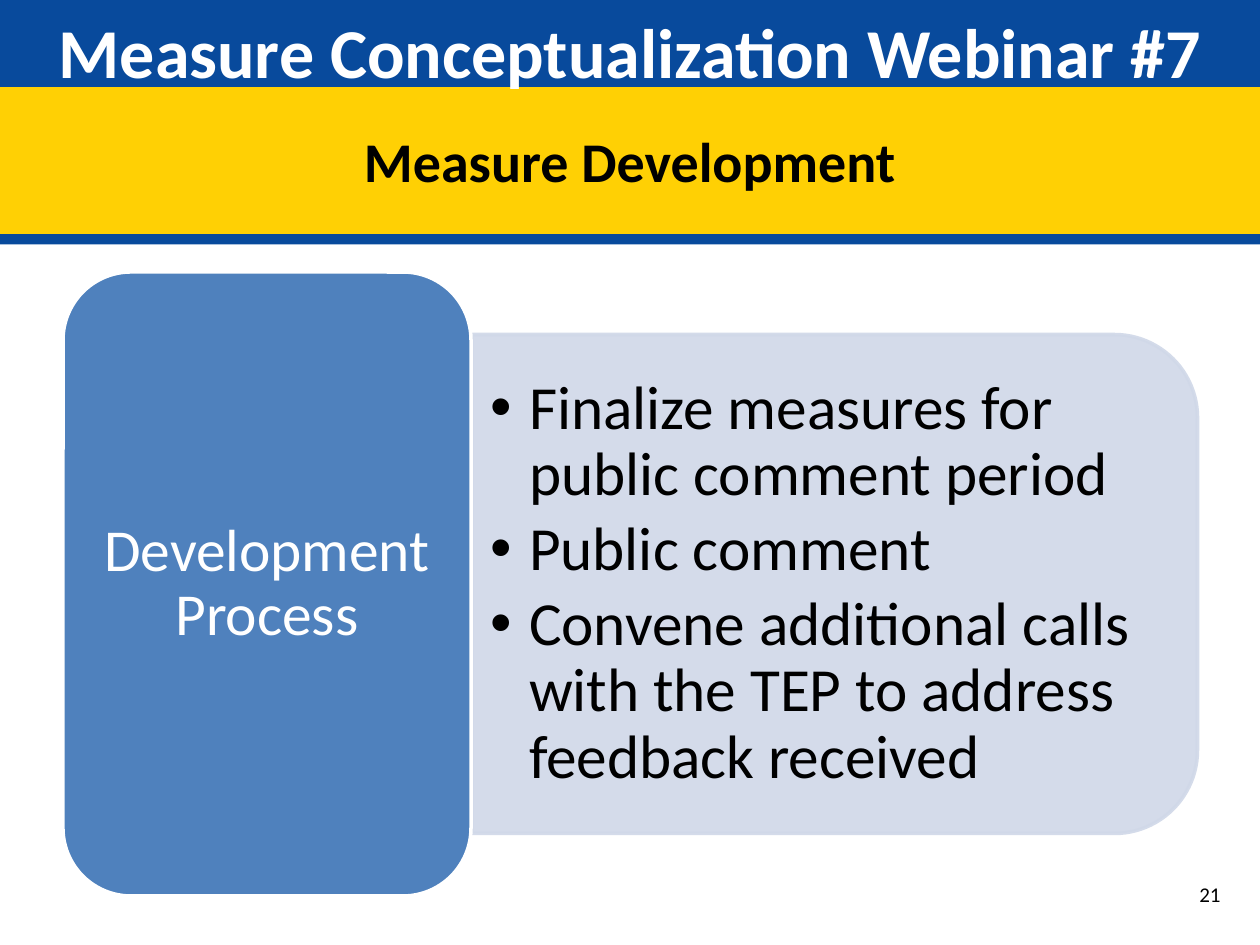
from lxml import etree
from pptx import Presentation
from pptx.dml.color import RGBColor
from pptx.enum.shapes import MSO_SHAPE
from pptx.enum.text import MSO_ANCHOR, MSO_AUTO_SIZE, PP_ALIGN
from pptx.oxml.ns import qn
from pptx.util import Pt

# Content
TITLE = "Measure Conceptualization Webinar #7"
SUBTITLE = "Measure Development"
STAGE = "Development Process"
STEPS = [
    "Finalize measures for public comment period",
    "Public comment",
    "Convene additional calls with the TEP to address feedback received",
]
PAGE_NUMBER = "21"

# Style
FONT = "Calibri"
BLUE = RGBColor(0x08, 0x4A, 0x9C)
YELLOW = RGBColor(0xFF, 0xD0, 0x04)
STAGE_BLUE = RGBColor(0x4F, 0x81, 0xBD)
PANEL_BLUE = RGBColor(0xD0, 0xD8, 0xE8)
WHITE = RGBColor(0xFF, 0xFF, 0xFF)
BLACK = RGBColor(0, 0, 0)

# Layout in px: left, top, width, height
PX = 914400 // 126
SLIDE_W, SLIDE_H = 1260, 945
TITLE_H, SUBTITLE_H = 87, 147
STAGE_BOX = (63, 272, 408, 624)
PANEL_BOX = (472, 334, 726, 499)
STEPS_BOX = (471, 359, 702, 450)
NUMBER_BOX = (1187, 875, 63, 38)


def px(*lengths):
    return [length * PX for length in lengths]


def set_margins(frame, left, top, right, bottom):
    (frame.margin_left, frame.margin_top,
     frame.margin_right, frame.margin_bottom) = px(left, top, right, bottom)


def style_text(paragraph, size, color, bold=False, align=PP_ALIGN.LEFT):
    paragraph.alignment = align
    for run in paragraph.runs:
        font = run.font
        font.name, font.size, font.bold = FONT, Pt(size), bold
        font.color.rgb = color


def add_filled(kind, box, fill, line=None):
    shape = slide.shapes.add_shape(kind, *px(*box))
    shape.shadow.inherit = False
    shape.fill.solid()
    shape.fill.fore_color.rgb = fill
    if line is None:
        shape.line.fill.background()
    else:
        shape.line.color.rgb = line
        shape.line.width = Pt(2)
    return shape


def add_edge_below(shape, color):
    """Give a band a hard 6 pt shadow straight down."""
    shape.shadow.inherit = False
    effects = shape._element.spPr.find(qn("a:effectLst"))
    shadow = etree.SubElement(effects, qn("a:outerShdw"), blurRad="0",
                              dist=str(Pt(6)), dir="5400000",
                              algn="t", rotWithShape="0")
    etree.SubElement(shadow, qn("a:srgbClr"), val=str(color))


def add_bullet(paragraph, indent):
    properties = paragraph._p.get_or_add_pPr()
    properties.set("marL", str(indent * PX))
    properties.set("indent", str(-indent * PX))
    etree.SubElement(properties, qn("a:buFont"), typeface="Arial")
    etree.SubElement(properties, qn("a:buChar"), char="•")


prs = Presentation()
prs.slide_width, prs.slide_height = px(SLIDE_W, SLIDE_H)
slide = prs.slides.add_slide(prs.slide_layouts[5])

# Page number
number = slide.shapes.add_textbox(*px(*NUMBER_BOX)).text_frame
number.text = PAGE_NUMBER
style_text(number.paragraphs[0], 12, BLACK)

# Steps panel: rounded top corners turned to the right
left, top, width, height = PANEL_BOX
turn = (width - height) // 2
panel = add_filled(MSO_SHAPE.ROUND_2_SAME_RECTANGLE,
                   (left + turn, top - turn, height, width),
                   PANEL_BLUE, PANEL_BLUE)
panel.rotation = 90
for panel_color in panel._element.spPr.iter(qn("a:srgbClr")):
    etree.SubElement(panel_color, qn("a:alpha"), val="90000")

# Steps
steps = slide.shapes.add_textbox(*px(*STEPS_BOX)).text_frame
steps.text = "\n".join(STEPS)
steps.word_wrap = True
steps.vertical_anchor = MSO_ANCHOR.MIDDLE
set_margins(steps, 19, 9, 19, 9)
for step in steps.paragraphs:
    style_text(step, 35, BLACK)
    step.line_spacing = 0.9
    step.space_after = Pt(5)
    add_bullet(step, 39)

# Stage
stage = add_filled(MSO_SHAPE.ROUNDED_RECTANGLE, STAGE_BOX, STAGE_BLUE, WHITE).text_frame
stage.text = STAGE
stage.word_wrap = True
stage.vertical_anchor = MSO_ANCHOR.MIDDLE
set_margins(stage, 18, 9, 18, 9)
style_text(stage.paragraphs[0], 34, WHITE, align=PP_ALIGN.CENTER)
stage.paragraphs[0].line_spacing = 0.9

# Subtitle band
subtitle = add_filled(MSO_SHAPE.RECTANGLE, (0, TITLE_H, SLIDE_W, SUBTITLE_H), YELLOW)
add_edge_below(subtitle, BLUE)
subtitle.text_frame.text = SUBTITLE
subtitle.text_frame.vertical_anchor = MSO_ANCHOR.MIDDLE
style_text(subtitle.text_frame.paragraphs[0], 32, BLACK, True, PP_ALIGN.CENTER)

# Title band, in front of the subtitle band
title = slide.shapes.title
title.left, title.top, title.width, title.height = px(0, 0, SLIDE_W, TITLE_H)
title.fill.solid()
title.fill.fore_color.rgb = BLUE
add_edge_below(title, YELLOW)
heading = title.text_frame
heading.text = TITLE
heading.auto_size = MSO_AUTO_SIZE.NONE
heading.vertical_anchor = MSO_ANCHOR.TOP
set_margins(heading, 12, 9, 12, 0)
style_text(heading.paragraphs[0], 40, WHITE, True, PP_ALIGN.CENTER)
slide.shapes._spTree.append(title._element)

prs.save("out.pptx")
